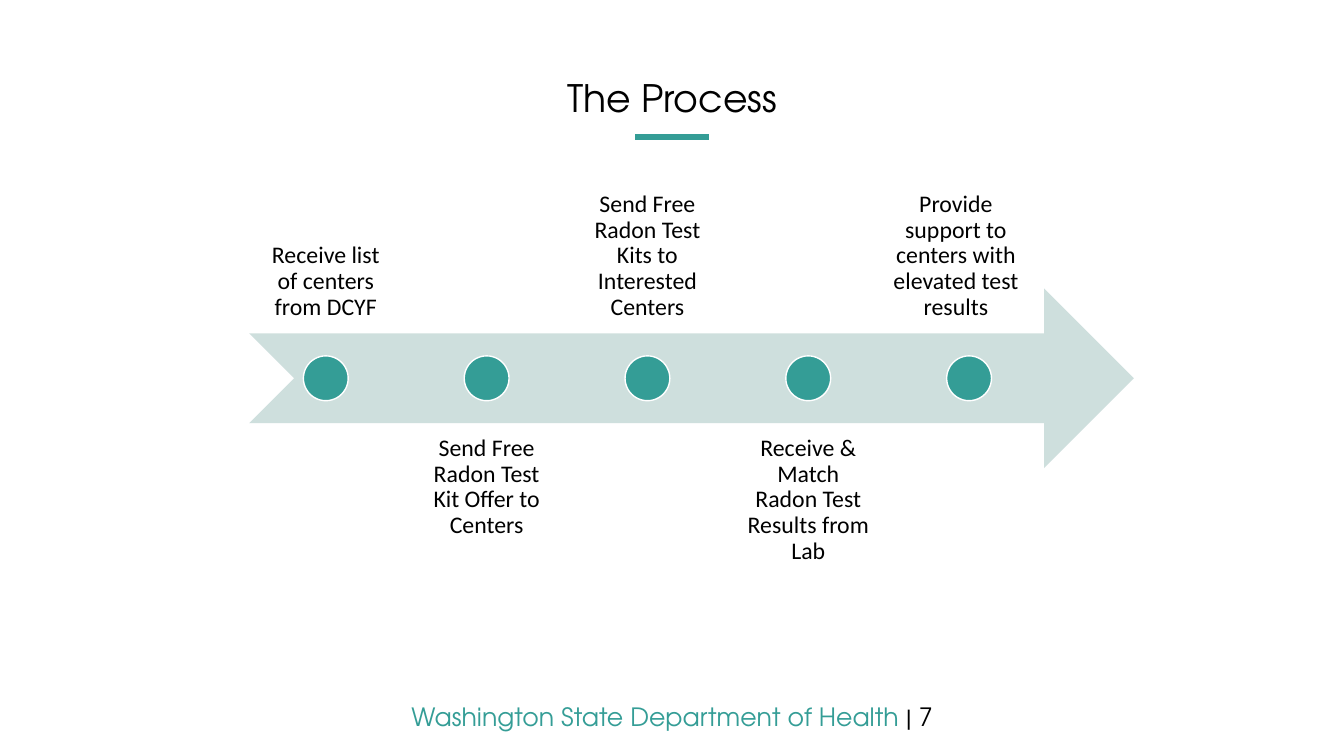
import pptx
import pptx.util
import pptx.dml.color
import pptx.enum.shapes
import pptx.enum.text
import pptx.oxml.ns
import lxml.etree

Pt = pptx.util.Pt
RGBColor = pptx.dml.color.RGBColor
SHAPE = pptx.enum.shapes.MSO_SHAPE
ANCHOR = pptx.enum.text.MSO_ANCHOR

TITLE = "The Process"
FOOTER = [("Washington State Department of Health ", "teal"), ("| 7", "black")]
STEPS = [
    ("Receive list of centers from DCYF", 0),
    ("Send Free Radon Test Kit Offer to Centers", 0),
    ("Send Free Radon Test Kits to Interested Centers", 0),
    ("Receive & Match Radon Test Results from Lab", 0),
    ("Provide support to centers with elevated test results", -9.4),
]

TEAL = RGBColor(0x34, 0x9D, 0x96)
PALE = RGBColor(0xCE, 0xDF, 0xDD)
BLACK = RGBColor(0, 0, 0)
WHITE = RGBColor(255, 255, 255)
COLORS = {"teal": TEAL, "black": BLACK}
HEADING_FONT = "TeX Gyre Adventor"
BODY_FONT = "Calibri"

SLIDE_W, SLIDE_H = 960, 540
ARROW_LEFT, ARROW_TOP, ARROW_W, ARROW_H = 178, 206, 632, 128.4
LABEL_W, LABEL_TOP_ABOVE, LABEL_TOP_BELOW = 109.44, 110, 302
STEP_PITCH = 114.87
DOT = 32

prs = pptx.Presentation()
prs.slide_width, prs.slide_height = Pt(SLIDE_W), Pt(SLIDE_H)
slide = prs.slides.add_slide(prs.slide_layouts[6])


def add_text(box, runs, font, size, anchor=ANCHOR.TOP, spacing=None, inset=None):
    sp = slide.shapes.add_textbox(*map(Pt, box))
    tf = sp.text_frame
    tf.word_wrap = True
    tf.vertical_anchor = anchor
    if inset is not None:
        tf.margin_left = tf.margin_right = Pt(inset)
        tf.margin_top = tf.margin_bottom = Pt(inset)
    p = tf.paragraphs[0]
    p.alignment = pptx.enum.text.PP_ALIGN.CENTER
    p.line_spacing = spacing
    p.font.name, p.font.size = font, Pt(size)
    for text, color in runs:
        r = p.add_run()
        r.text = text
        r.font.color.rgb = COLORS[color]


def add_shape(kind, box, fill, line=None):
    sp = slide.shapes.add_shape(kind, *map(Pt, box))
    sp.shadow.inherit = False
    sp.fill.solid()
    sp.fill.fore_color.rgb = fill
    if line is None:
        sp.line.fill.background()
    else:
        sp.line.color.rgb = line
        sp.line.width = Pt(1)


rule = slide.shapes.add_connector(
    pptx.enum.shapes.MSO_CONNECTOR.STRAIGHT, Pt(453.6), Pt(98), Pt(506.4), Pt(98))
rule.line.color.rgb = TEAL
rule.line.width = Pt(4)
lxml.etree.SubElement(rule._element.spPr, pptx.oxml.ns.qn("a:effectLst"))

add_text((0, 497.5, SLIDE_W, 29), FOOTER, HEADING_FONT, 18)
add_text((0, 52.5, SLIDE_W, 38), [(TITLE, "black")], HEADING_FONT, 27, ANCHOR.MIDDLE, 0.9)

add_shape(SHAPE.NOTCHED_RIGHT_ARROW, (ARROW_LEFT, ARROW_TOP, ARROW_W, ARROW_H), PALE)
for i, (label, nudge) in enumerate(STEPS):
    left = ARROW_LEFT + i * STEP_PITCH
    above = i % 2 == 0
    top = LABEL_TOP_ABOVE if above else LABEL_TOP_BELOW
    add_text((left + nudge, top, LABEL_W, ARROW_H), [(label, "black")], BODY_FONT, 17,
             ANCHOR.BOTTOM if above else ANCHOR.TOP, 0.9, 9.4)
    add_shape(SHAPE.OVAL, (left + (LABEL_W - DOT) / 2, ARROW_TOP + (ARROW_H - DOT) / 2, DOT, DOT),
              TEAL, WHITE)

prs.save("out.pptx")
